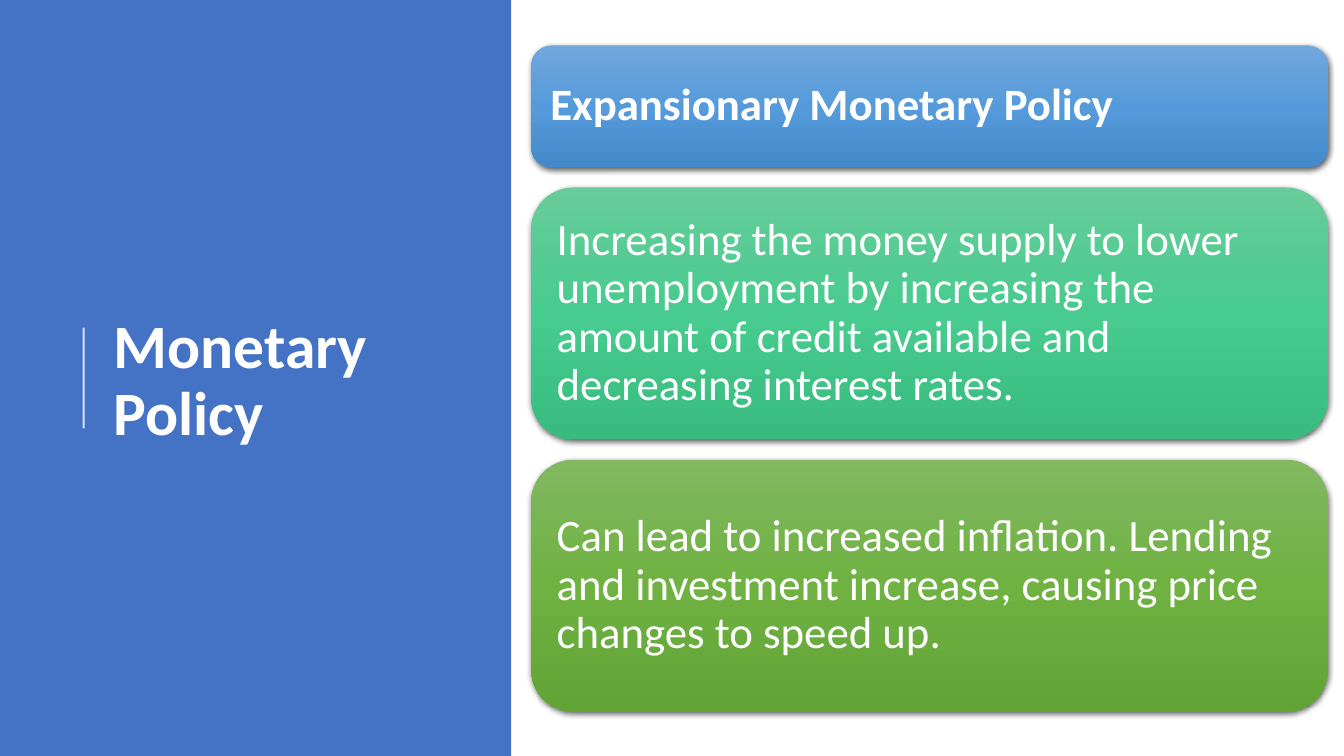
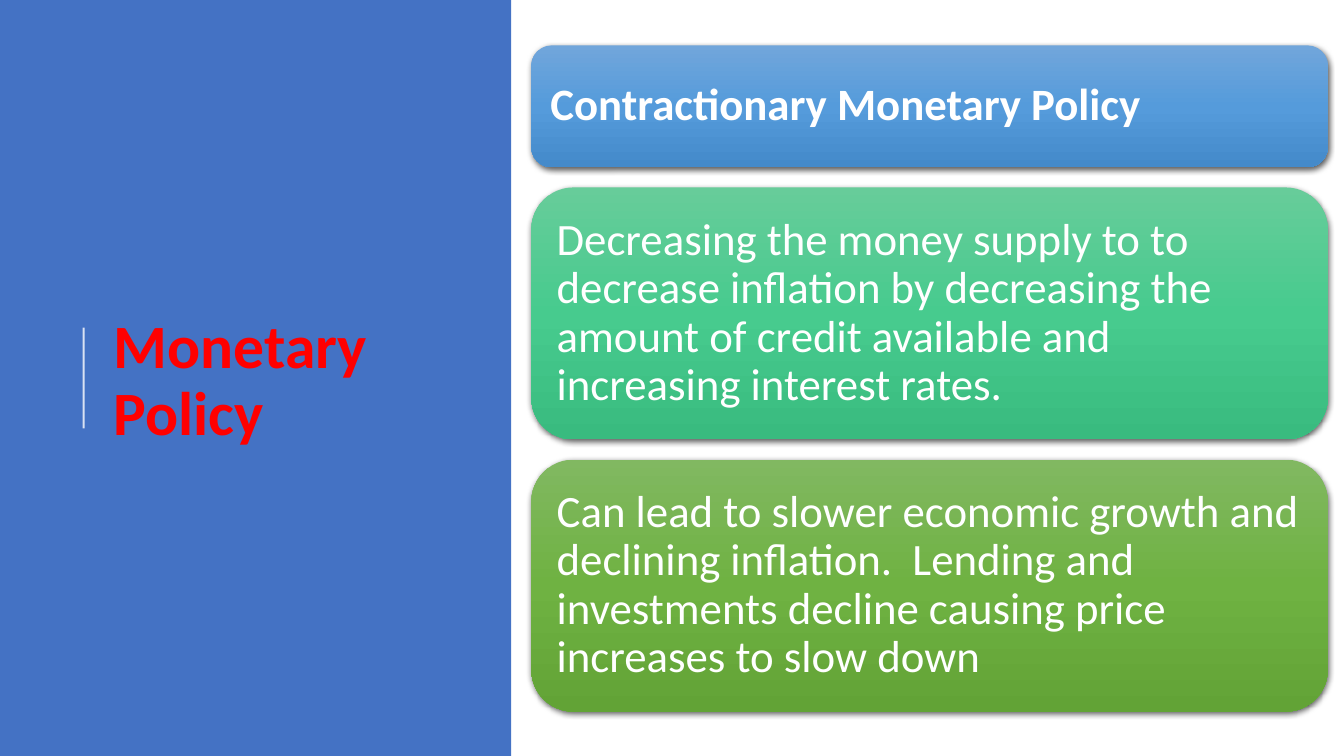
import pptx
import pptx.dml.color
import pptx.enum.shapes
import pptx.enum.text
import pptx.oxml
import pptx.oxml.ns
import pptx.util
from lxml import etree

Inches = pptx.util.Inches
Pt = pptx.util.Pt
Shapes = pptx.enum.shapes.MSO_SHAPE
qn = pptx.oxml.ns.qn

SLIDE_WIDTH, SLIDE_HEIGHT = 13.33, 7.5
BAND_WIDTH = 5.07
FONT = "Calibri"
WHITE, BLUE, RED = "FFFFFF", "4472C4", "FF0000"
CARD_GAP = 0.2
# Height and gradient colours of the cards, from top to bottom
CARD_STYLES = [
    (1.21, ["71A6DB", "559BDB", "448ACA"]),
    (2.5, ["67CC9A", "47CB8E", "39BB7F"]),
    (2.5, ["81B861", "6FB242", "62A336"]),
]
SLIDES = [
    (WHITE, [
        "Expansionary Monetary Policy",
        "Increasing the money supply to lower unemployment by increasing the "
        "amount of credit available and decreasing interest rates.",
        "Can lead to increased inflation. Lending and investment increase, "
        "causing price changes to speed up.",
    ]),
    (RED, [
        "Contractionary Monetary Policy",
        "Decreasing the money supply to to decrease inflation by decreasing "
        "the amount of credit available and increasing interest rates.",
        "Can lead to slower economic growth and declining inflation.  Lending "
        "and investments decline causing price increases to slow down",
    ]),
]


def color(value):
    return pptx.dml.color.RGBColor.from_string(value)


def set_all(target, values):
    for name, value in values.items():
        setattr(target, name, value)


def add_child(parent, tag, **attributes):
    return etree.SubElement(parent, qn(tag), attributes)


def add_color(parent, value, alpha=None):
    """Add a colour element, with opacity in percent if given."""
    element = add_child(parent, "a:srgbClr", val=value)
    if alpha is not None:
        add_child(element, "a:alpha", val=str(alpha * 1000))


def write_text(shape, text, size, text_color, bold, margins):
    frame = shape.text_frame
    set_all(frame, {
        "word_wrap": True,
        "vertical_anchor": pptx.enum.text.MSO_ANCHOR.MIDDLE,
        **margins,
    })
    para = frame.paragraphs[0]
    set_all(para, {
        "alignment": pptx.enum.text.PP_ALIGN.LEFT,
        "line_spacing": 0.9,
    })
    span = para.add_run()
    span.text = text
    set_all(span.font, {"name": FONT, "size": Pt(size), "bold": bold})
    span.font.color.rgb = color(text_color)


def fill_gradient(shape, colors):
    """Fill from top to bottom with evenly spaced colours."""
    shape.fill.gradient()
    shape.fill.gradient_angle = 270
    stops = shape._element.spPr.find(qn("a:gradFill")).find(qn("a:gsLst"))
    for stop in list(stops):
        stops.remove(stop)
    for index, value in enumerate(colors):
        position = 100000 * index // (len(colors) - 1)
        add_color(add_child(stops, "a:gs", pos=str(position)), value)


def add_soft_shadow(shape):
    shape.shadow.inherit = False
    effects = shape._element.spPr.find(qn("a:effectLst"))
    shadow = add_child(
        effects, "a:outerShdw", blurRad=str(Pt(4.5)), dist=str(Pt(1.5)),
        dir="5400000", algn="ctr", rotWithShape="0")
    add_color(shadow, "000000", 63)


def add_title_band(page, left, top, width, height, title_color):
    band = page.shapes.add_shape(
        Shapes.RECTANGLE, Inches(left), Inches(top), Inches(width), Inches(height))
    band.shadow.inherit = False
    band.fill.solid()
    band.fill.fore_color.rgb = color(BLUE)
    band.line.fill.background()

    title = page.shapes.add_textbox(
        Inches(left + 1.03), Inches(top + 0.78),
        Inches(width - 1.38), Inches(height - 1.48))
    write_text(title, "Monetary Policy", 44, title_color, True, {})

    rule_x, middle = Inches(left + 0.83), top + height / 2
    rule = page.shapes.add_connector(
        pptx.enum.shapes.MSO_CONNECTOR.STRAIGHT,
        rule_x, Inches(middle + 0.5), rule_x, Inches(middle - 0.5))
    rule.line.width = Pt(1.5)
    rule.line.color.rgb = color(WHITE)
    line_color = next(rule._element.spPr.iter(qn("a:srgbClr")))
    add_child(line_color, "a:alpha", val="80000")
    add_child(rule._element.spPr, "a:effectLst")


def add_cards(page, left, top, width, texts):
    """Stack a bold heading card and the text cards below it."""
    sides = ("left", "top", "right", "bottom")
    margins = {f"margin_{side}": Inches(0.13) for side in sides}
    for index, (text, (height, colors)) in enumerate(zip(texts, CARD_STYLES)):
        card = page.shapes.add_shape(
            Shapes.ROUNDED_RECTANGLE,
            Inches(left), Inches(top), Inches(width), Inches(height))
        fill_gradient(card, colors)
        card.line.fill.background()
        add_soft_shadow(card)
        write_text(card, text, 32, WHITE, index == 0, margins)
        top += height + CARD_GAP


def add_policy_slide(deck, title_color, texts):
    page = deck.slides.add_slide(deck.slide_layouts[6])
    add_title_band(page, 0, 0, BAND_WIDTH, SLIDE_HEIGHT, title_color)
    add_cards(page, BAND_WIDTH + 0.2, 0.45, 7.9, texts)


def main():
    deck = pptx.Presentation()
    set_all(deck, {
        "slide_width": Inches(SLIDE_WIDTH),
        "slide_height": Inches(SLIDE_HEIGHT),
    })
    for title_color, texts in SLIDES:
        add_policy_slide(deck, title_color, texts)
    deck.save("out.pptx")


if __name__ == "__main__":
    main()
